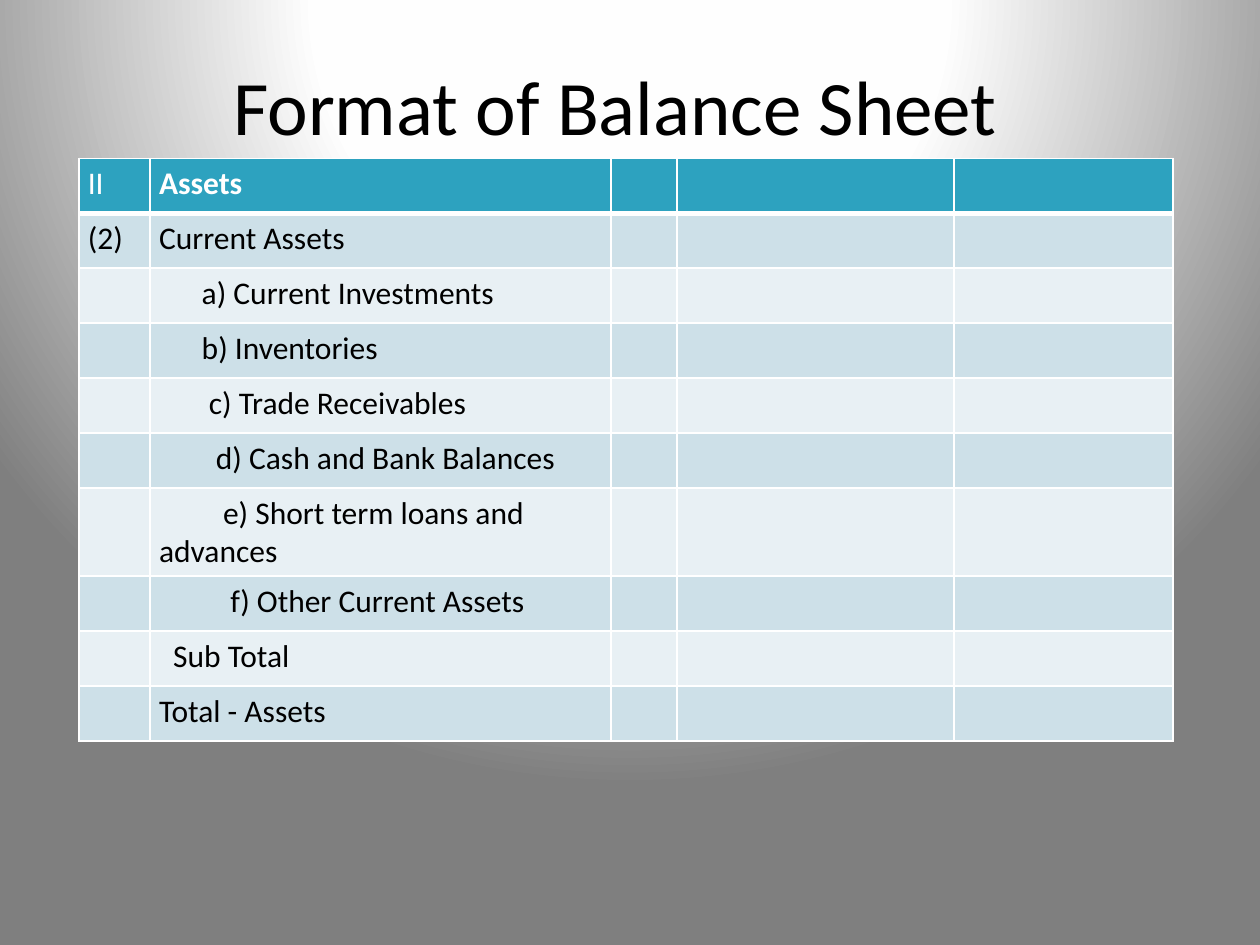
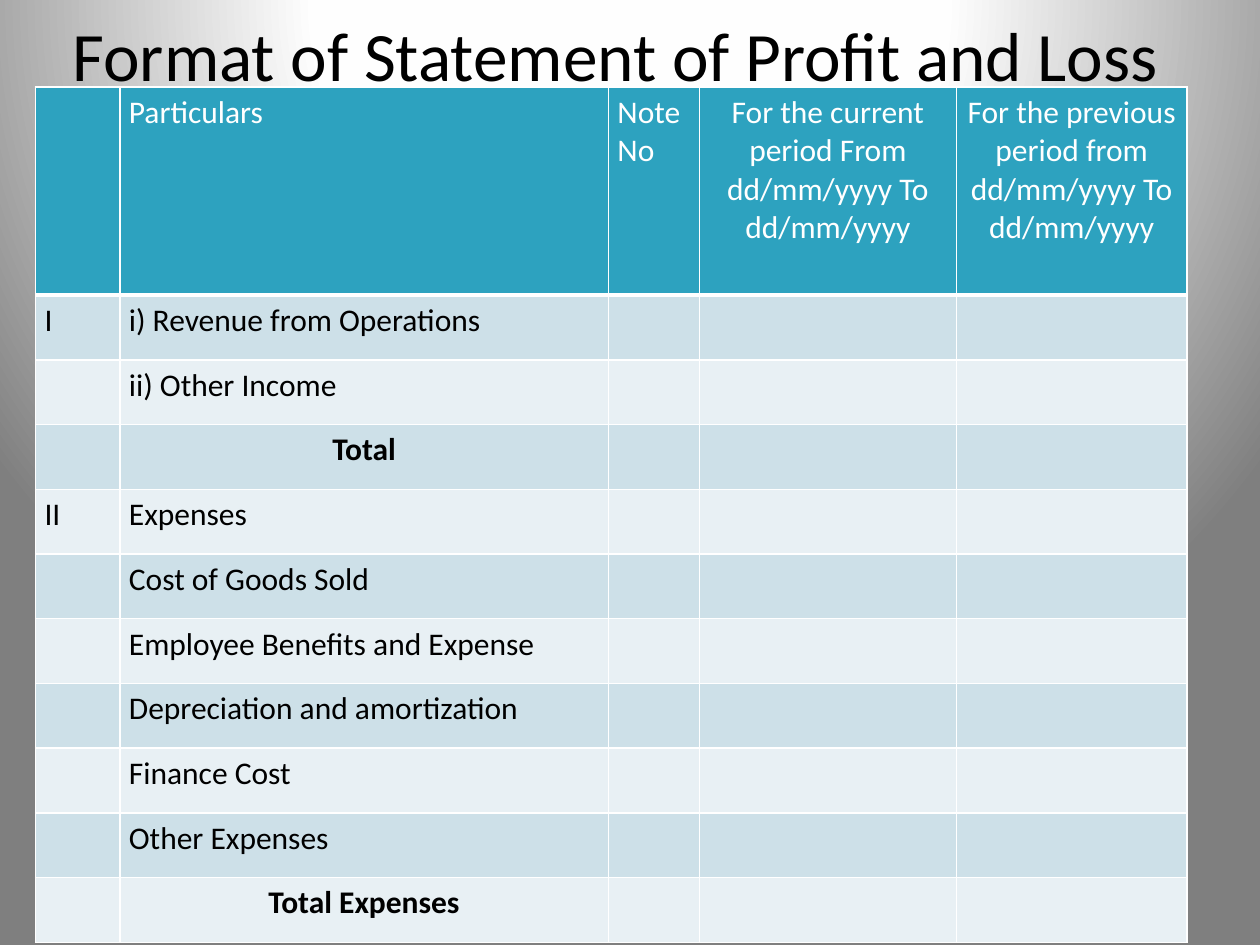
from dataclasses import dataclass

from lxml import etree
from pptx import Presentation
from pptx.dml.color import RGBColor
from pptx.enum import text
from pptx.oxml import ns
from pptx.util import Pt

FONT = "Calibri"
BLACK, WHITE = "000000", "FFFFFF"
HEADER_FILL = "2DA2BF"
BAND_FILLS = ("CDE0E8", "E8F0F4")
BACKDROP_STOPS = ((0, "FFFFFF"), (40, "FEFEFE"), (100, "7F7F7F"))
BODY_SIZE = 18
CENTER = text.PP_ALIGN.CENTER
LEFT = text.PP_ALIGN.LEFT


@dataclass
class Entry:
    """Wording of one cell; indent moves only its first line."""
    wording: str
    bold: bool = False
    align: text.PP_ALIGN = LEFT
    indent: float = 0


BALANCE_ROWS = [
    ("II", Entry("Assets", bold=True)),
    ("(2)", "Current Assets"),
    ("", Entry("a) Current Investments", indent=24.4)),
    ("", Entry("b) Inventories", indent=24.4)),
    ("", Entry("c) Trade Receivables", indent=28.5)),
    ("", Entry("d) Cash and Bank Balances", indent=32.5)),
    ("", Entry("e) Short term loans and advances", indent=36.6)),
    ("", Entry("f) Other Current Assets", indent=40.7)),
    ("", Entry("Sub Total", indent=8.1)),
    ("", "Total - Assets"),
]

PROFIT_ROWS = [
    ("", "Particulars", "Note No",
     Entry("For the current period From dd/mm/yyyy To dd/mm/yyyy", align=CENTER),
     Entry("For the previous period from dd/mm/yyyy To dd/mm/yyyy", align=CENTER)),
    ("I", "i) Revenue from Operations"),
    ("", "ii) Other Income"),
    ("", Entry("Total", bold=True, align=CENTER)),
    ("II", "Expenses"),
    ("", "Cost of Goods Sold"),
    ("", "Employee Benefits and Expense"),
    ("", "Depreciation and amortization"),
    ("", "Finance Cost"),
    ("", "Other Expenses"),
    ("", Entry("Total Expenses", bold=True, align=CENTER)),
]


def paint(color_format, hex_color):
    color_format.rgb = RGBColor.from_string(hex_color)


def add_run(paragraph, wording, size, color, bold=False):
    run = paragraph.add_run()
    run.text = wording
    run.font.name = FONT
    run.font.size = Pt(size)
    run.font.bold = bold
    paint(run.font.color, color)


def add_backdrop(slide):
    """Fill the background with a circular gradient centred above the slide."""
    slide.background.fill.gradient()
    gradient = next(slide.element.iter(ns.qn("a:gradFill")))
    for child in list(gradient):
        gradient.remove(child)
    stops = etree.SubElement(gradient, ns.qn("a:gsLst"))
    for percent, color in BACKDROP_STOPS:
        stop = etree.SubElement(stops, ns.qn("a:gs"), pos=str(percent * 1000))
        etree.SubElement(stop, ns.qn("a:srgbClr"), val=color)
    circle = etree.SubElement(gradient, ns.qn("a:path"), path="circle")
    etree.SubElement(circle, ns.qn("a:fillToRect"),
                     l="50000", t="-80000", r="50000", b="180000")


def add_title(slide, wording, height, size):
    box = slide.shapes.add_textbox(Pt(33.1), Pt(28.8), Pt(637.2), Pt(height))
    frame = box.text_frame
    frame.word_wrap = True
    frame.vertical_anchor = text.MSO_ANCHOR.MIDDLE
    frame.margin_left = frame.margin_right = 0
    frame.margin_top = frame.margin_bottom = 0
    heading = frame.paragraphs[0]
    heading.alignment = CENTER
    add_run(heading, wording, size, BLACK)


def add_borders(cell, bottom_width):
    properties = cell._tc.get_or_add_tcPr()
    for side, width in (("L", 1), ("R", 1), ("T", 1), ("B", bottom_width)):
        line = etree.SubElement(properties, ns.qn("a:ln" + side), w=str(Pt(width)))
        fill = etree.SubElement(line, ns.qn("a:solidFill"))
        etree.SubElement(fill, ns.qn("a:srgbClr"), val=WHITE)


def fill_cell(cell, entry, row_index):
    is_header = row_index == 0
    add_borders(cell, 3 if is_header else 1)
    cell.fill.solid()
    paint(cell.fill.fore_color,
          HEADER_FILL if is_header else BAND_FILLS[(row_index - 1) % 2])
    cell.margin_left = cell.margin_right = Pt(5.2)
    cell.margin_top = cell.margin_bottom = Pt(3.6)
    if isinstance(entry, str):
        entry = Entry(entry)
    if not entry.wording:
        return
    paragraph = cell.text_frame.paragraphs[0]
    paragraph.alignment = entry.align
    if entry.indent:
        paragraph._p.get_or_add_pPr().set("indent", str(Pt(entry.indent)))
    add_run(paragraph, entry.wording, BODY_SIZE, WHITE if is_header else BLACK, entry.bold)


def add_statement(slide, left, top, widths, header_height, row_height, rows):
    """Add a banded statement table; short rows end in empty cells."""
    heights = [header_height] + [row_height] * (len(rows) - 1)
    table = slide.shapes.add_table(len(rows), len(widths), Pt(left), Pt(top),
                                   Pt(sum(widths)), Pt(sum(heights))).table
    table.first_row = table.horz_banding = False
    for column, width in zip(table.columns, widths):
        column.width = Pt(width)
    for row_index, entries in enumerate(rows):
        table.rows[row_index].height = Pt(heights[row_index])
        for column_index in range(len(widths)):
            entry = entries[column_index] if column_index < len(entries) else ""
            fill_cell(table.cell(row_index, column_index), entry, row_index)


def add_slide(deck):
    slide = deck.slides.add_slide(deck.slide_layouts[6])
    add_backdrop(slide)
    return slide


def main():
    deck = Presentation()
    deck.slide_width, deck.slide_height = Pt(720), Pt(540)

    balance = add_slide(deck)
    add_title(balance, "Format of Balance Sheet", 61.9, 44)
    add_statement(balance, 45, 90.5, (40.7, 263.5, 37.6, 158.4, 125.2),
                  31.4, 31.4, BALANCE_ROWS)

    profit = add_slide(deck)
    add_title(profit, "Format of Statement of Profit and Loss", 3.6, 39.6)
    add_statement(profit, 20.3, 49.8, (48.2, 279.2, 52, 146.9, 131.7),
                  118.8, 37, PROFIT_ROWS)

    deck.save("out.pptx")


if __name__ == "__main__":
    main()
